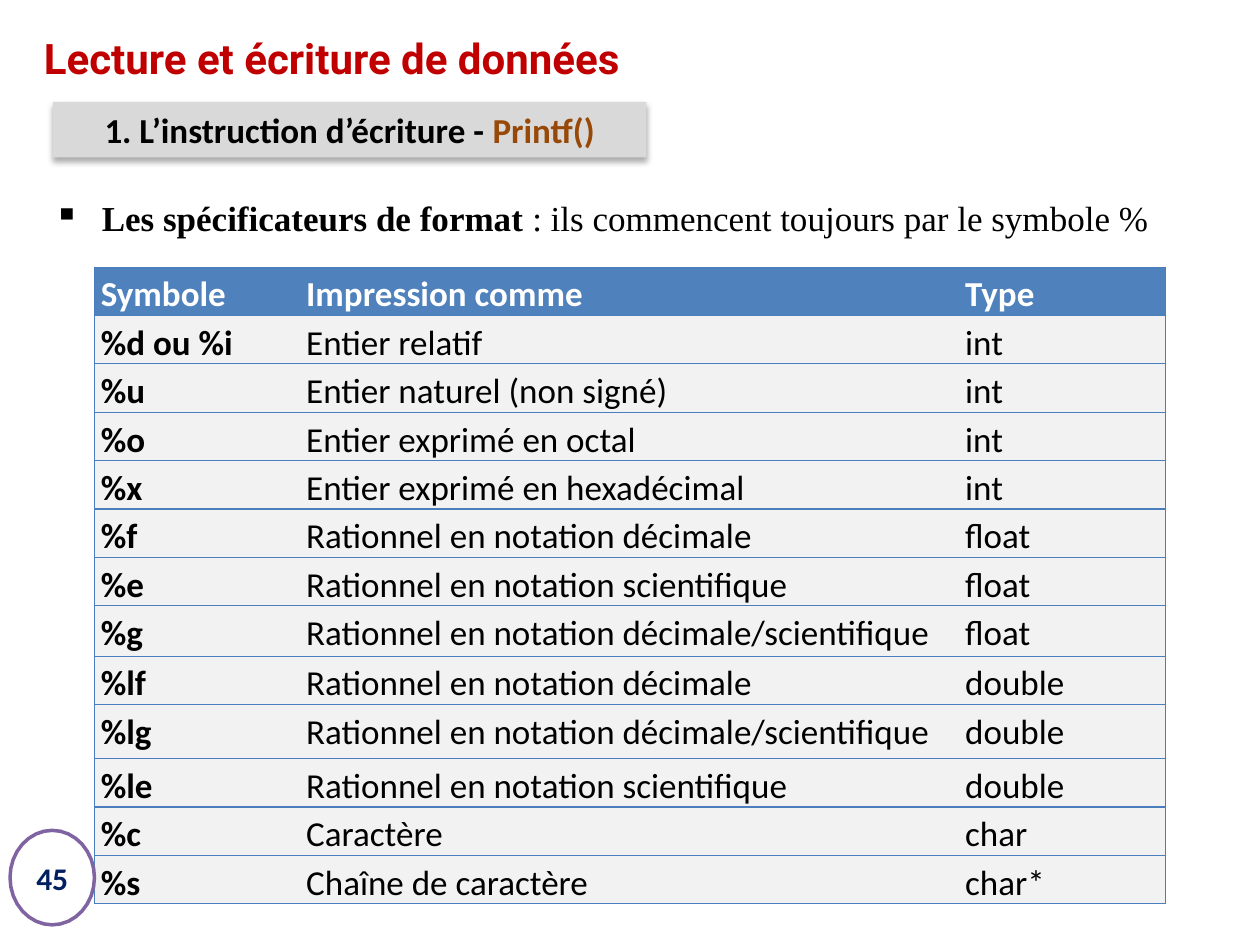
from lxml.etree import SubElement
from pptx import Presentation
from pptx.dml.color import RGBColor
from pptx.enum.shapes import MSO_SHAPE as Preset
from pptx.enum.text import MSO_ANCHOR as Anchor, PP_ALIGN as Align
from pptx.oxml import parse_xml
from pptx.oxml.ns import nsdecls, qn
from pptx.util import Emu, Inches, Pt

SPECIFIERS = [
    ("Symbole", "Impression comme", "Type"),
    ("%d ou %i", "Entier relatif", "int"),
    ("%u", "Entier naturel (non signé)", "int"),
    ("%o", "Entier exprimé en octal", "int"),
    ("%x", "Entier exprimé en hexadécimal", "int"),
    ("%f", "Rationnel en notation décimale", "float"),
    ("%e", "Rationnel en notation scientifique", "float"),
    ("%g", "Rationnel en notation décimale/scientifique", "float"),
    ("%lf", "Rationnel en notation décimale", "double"),
    ("%lg", "Rationnel en notation décimale/scientifique", "double"),
    ("%le", "Rationnel en notation scientifique", "double"),
    ("%c", "Caractère", "char"),
    ("%s", "Chaîne de caractère", "char*"),
]
COLUMN_WIDTHS = [1.63, 5.23, 1.64]
ROW_HEIGHT = 0.38
TALL_ROWS = {7: 0.4, 9: 0.43}


def color(hex_code):
    return RGBColor.from_string(hex_code)


class SlideBuilder:
    font = "Calibri"
    ink = "000000"
    header = "4F81BD"
    body = "F2F2F2"
    border = "4B7EBC"

    def __init__(self, slide):
        self.slide = slide

    def add_runs(self, paragraph, *parts, size=20, font=None):
        for words, hex_code, bold in parts:
            run = paragraph.add_run()
            run.text = words
            run.font.name = font or self.font
            run.font.size = Pt(size)
            run.font.bold = bold
            run.font.color.rgb = color(hex_code)

    def text(self, box, *parts, bullet=None, spacing=None, **style):
        frame = self.slide.shapes.add_textbox(*map(Inches, box)).text_frame
        frame.word_wrap = True
        frame.vertical_anchor = Anchor.MIDDLE
        paragraph = frame.paragraphs[0]
        paragraph.line_spacing = spacing
        self.add_runs(paragraph, *parts, **style)
        if bullet:
            properties = paragraph._p.get_or_add_pPr()
            properties.set("marL", str(Inches(0.38)))
            properties.set("indent", str(Inches(-0.38)))
            SubElement(properties, qn("a:buChar"), char=bullet)

    def shape(self, preset, box, fill, *parts, line=None, shadow=False, **style):
        shape = self.slide.shapes.add_shape(preset, *map(Inches, box))
        shape.shadow.inherit = False
        shape.fill.solid()
        shape.fill.fore_color.rgb = color(fill)
        if line:
            shape.line.color.rgb = color(line)
            shape.line.width = Pt(2)
        else:
            shape.line.fill.background()
        if shadow:
            effects = shape._element.spPr.find(qn("a:effectLst"))
            effects.append(parse_xml(
                f'<a:outerShdw {nsdecls("a")} blurRad="{Pt(3.5)}" dist="{Pt(2.2)}" '
                'dir="5400000" rotWithShape="0"><a:srgbClr val="000000">'
                '<a:alpha val="32000"/></a:srgbClr></a:outerShdw>'))
        frame = shape.text_frame
        frame.word_wrap = True
        frame.vertical_anchor = Anchor.MIDDLE
        frame.paragraphs[0].alignment = Align.CENTER
        self.add_runs(frame.paragraphs[0], *parts, **style)
        return shape

    def borders(self, cell, sides):
        properties = cell._tc.get_or_add_tcPr()
        for position, side in enumerate("LRTB"):
            paint = (f'<a:solidFill><a:srgbClr val="{self.border}"/></a:solidFill>'
                     if side in sides else "<a:noFill/>")
            properties.insert(position, parse_xml(
                f'<a:ln{side} {nsdecls("a")} w="{Pt(0.75)}">{paint}</a:ln{side}>'))

    def table(self, left, top, rows, widths, heights):
        size = map(Inches, (left, top, sum(widths), sum(heights)))
        table = self.slide.shapes.add_table(len(rows), len(widths), *size).table
        for column, width in zip(table.columns, widths):
            column.width = Inches(width)
        for row, height in zip(table.rows, heights):
            row.height = Inches(height)
        for r, row in enumerate(rows):
            for c, words in enumerate(row):
                cell = table.cell(r, c)
                cell.margin_left, cell.margin_right = Inches(0.05), Inches(0.03)
                cell.margin_top = cell.margin_bottom = Emu(0)
                cell.fill.solid()
                cell.fill.fore_color.rgb = color(self.body if r else self.header)
                paragraph = cell.text_frame.paragraphs[0]
                paragraph.line_spacing = 1.15
                ink = self.ink if r else "FFFFFF"
                self.add_runs(paragraph, (words, ink, r == 0 or c == 0))
                outer = {0: "L", len(widths) - 1: "R"}.get(c, "")
                self.borders(cell, "TB" + outer)


def main():
    deck = Presentation()
    deck.slide_width, deck.slide_height = Inches(10), Inches(7.5)
    page = SlideBuilder(deck.slides.add_slide(deck.slide_layouts[6]))

    page.text((0.25, 0.09, 5.08, 0.74),
              ("Lecture et écriture de données", "C00000", True),
              size=24, font="Roboto")
    page.shape(Preset.RECTANGLE, (0.42, 0.81, 4.71, 0.44), "D9D9D9",
               ("1. L’instruction d’écriture - ", page.ink, True),
               ("Printf()", "984807", True), shadow=True)
    page.text((0.33, 1.37, 9.5, 0.55),
              ("Les spécificateurs de format ", page.ink, True),
              (": ils commencent toujours par le symbole %", page.ink, False),
              font="Times New Roman", bullet="▪", spacing=1.5)
    heights = [TALL_ROWS.get(r, ROW_HEIGHT) for r in range(len(SPECIFIERS))]
    page.table(0.75, 2.12, SPECIFIERS, COLUMN_WIDTHS, heights)
    page_number = page.shape(Preset.STAR_16_POINT, (0.08, 6.59, 0.67, 0.75), "FFFFFF",
                             ("45", "002060", True), line="8064A2", size=18)
    page_number.adjustments[0] = 0.5
    page_number.text_frame.margin_left = page_number.text_frame.margin_right = Emu(0)

    deck.save("out.pptx")


if __name__ == "__main__":
    main()
